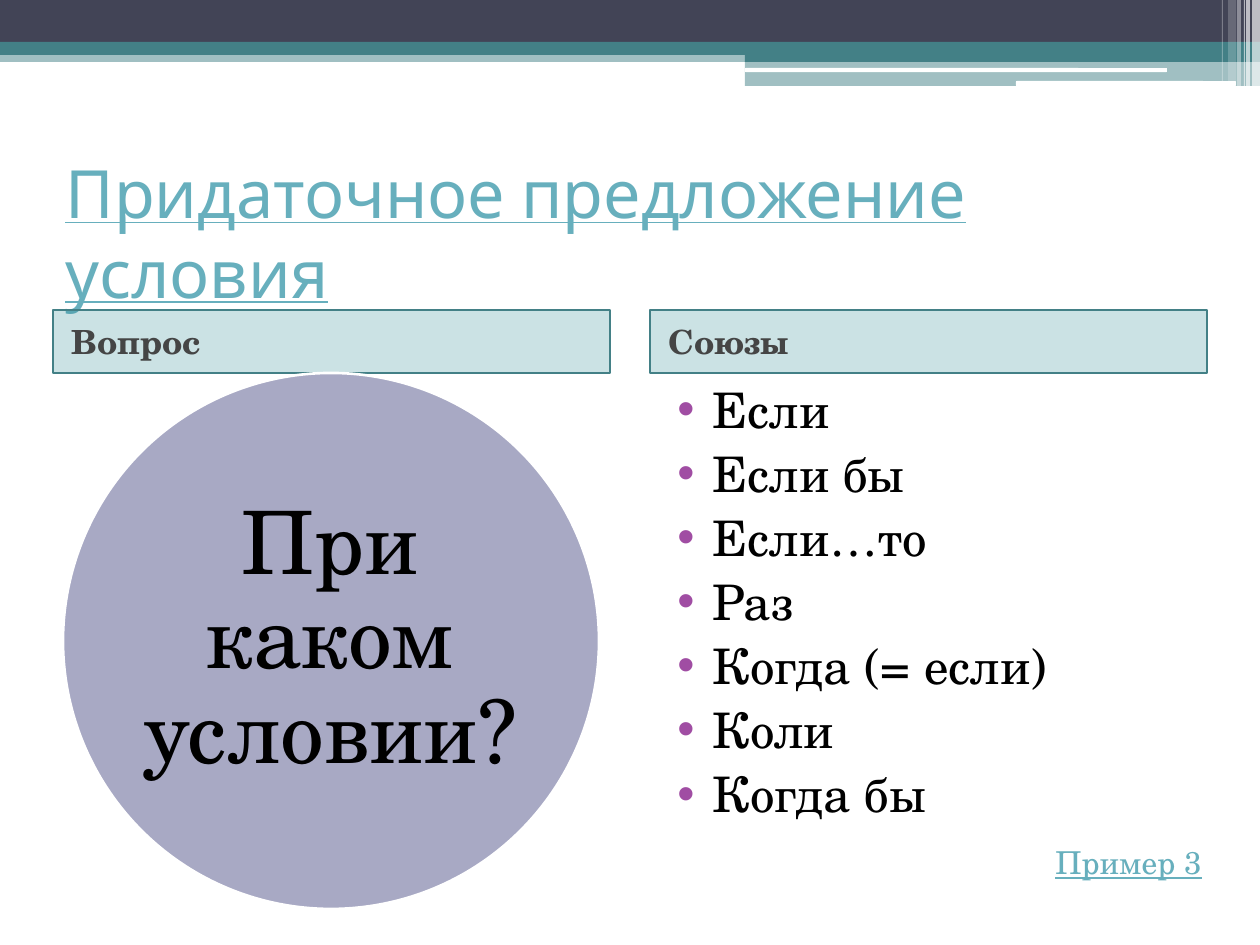
from lxml.etree import SubElement
from pptx import Presentation
from pptx.dml.color import RGBColor
from pptx.enum.shapes import MSO_SHAPE
from pptx.enum.text import MSO_ANCHOR, PP_ALIGN
from pptx.oxml.ns import qn
from pptx.util import Emu, Pt

PX = 914400 / 126
SERIF, SANS = "TeX Gyre Schola", "Karla"
COLORS = {
    "navy": "424456", "teal": "438086", "header": "328E97", "white": "FFFFFF",
    "circle": "53548A", "link": "67AFBD", "gray": "454545", "black": "000000",
    "bullet": "A04DA3",
}
CONJUNCTIONS = ["Если", "Если бы", "Если…то", "Раз", "Когда (= если)", "Коли", "Когда бы"]


def px(length):
    return Emu(round(length * PX))


def color(name):
    return RGBColor.from_string(COLORS[name])


def add_panel(page, bounds, fill, opacity=100, kind=MSO_SHAPE.RECTANGLE, line=None, width=1):
    panel = page.shapes.add_shape(kind, *map(px, bounds))
    panel.shadow.inherit = False
    panel.fill.solid()
    panel.fill.fore_color.rgb = color(fill)
    if opacity < 100:
        tint = panel.fill._xPr.find(qn("a:solidFill"))[0]
        SubElement(tint, qn("a:alpha")).set("val", str(opacity * 1000))
    if line:
        panel.line.color.rgb = color(line)
        panel.line.width = Pt(width)
    else:
        panel.line.fill.background()
    return panel


def write(shape, lines, size, ink, font=SERIF, anchor=MSO_ANCHOR.TOP, align=PP_ALIGN.LEFT,
          before=0, underline=False, bold=False):
    frame = shape.text_frame
    frame.word_wrap = True
    frame.vertical_anchor = anchor
    frame.text = "\n".join(lines)
    for paragraph in frame.paragraphs:
        paragraph.alignment = align
        paragraph.space_before = Pt(before)
        paragraph.font.name = font
        paragraph.font.size = Pt(size)
        paragraph.font.color.rgb = color(ink)
        paragraph.font.underline = underline
        paragraph.font.bold = bold
    return frame


def add_text(page, bounds, lines, size, ink, **style):
    box = page.shapes.add_textbox(*map(px, bounds))
    return write(box, lines, size, ink, **style)


def indent(paragraph, left, first=0):
    properties = paragraph._p.get_or_add_pPr()
    properties.set("marL", str(px(left)))
    properties.set("indent", str(px(first)))
    return properties


def add_bullet(paragraph):
    properties = indent(paragraph, 50, -35)
    tint = SubElement(properties, qn("a:buClr"))
    SubElement(tint, qn("a:srgbClr")).set("val", COLORS["bullet"])
    SubElement(properties, qn("a:buFont")).set("typeface", "Arial")
    SubElement(properties, qn("a:buChar")).set("char", "•")
    # The schema wants default run properties after the bullet
    defaults = properties.find(qn("a:defRPr"))
    if defaults is not None:
        properties.append(defaults)


def add_banner(page):
    # Horizontal bands
    add_panel(page, (0, 50, 1260, 12), "teal", 50)
    add_panel(page, (0, 0, 1260, 43), "navy")
    add_panel(page, (0, 42, 1260, 13), "teal")
    add_panel(page, (745, 49, 515, 13), "teal")
    add_panel(page, (745, 61, 515, 25), "teal", 50)
    for bounds in ((745, 68, 422, 4), (1016, 81, 220, 5)):
        add_panel(page, bounds, "white", kind=MSO_SHAPE.ROUNDED_RECTANGLE)
    # Vertical stripes at the right edge
    stripes = [(1252, 8, 86, 65), (1246, 4, 86, 65), (1244, 1, 86, 60),
               (1237, 4, 86, 40), (1228, 8, 81, 20), (1222, 1, 81, 30)]
    for left, width, height, opacity in stripes:
        add_panel(page, (left, 0, width, height), "white", opacity)


def add_header(page, left, label):
    header = add_panel(page, (left, 310, 557, 63), "header", 25, line="teal")
    frame = write(header, [label], 19, "gray", anchor=MSO_ANCHOR.MIDDLE, before=3, bold=True)
    indent(frame.paragraphs[0], 6)


def add_question(page):
    add_panel(page, (63, 373, 536, 536), "circle", 50, MSO_SHAPE.OVAL, "white", 1.5)
    frame = add_text(page, (141, 451, 379, 379), ["При каком условии?"], 50, "black",
                     anchor=MSO_ANCHOR.MIDDLE, align=PP_ALIGN.CENTER)
    frame.margin_left = frame.margin_right = frame.margin_top = frame.margin_bottom = 0
    frame.paragraphs[0].line_spacing = 0.9


def main():
    deck = Presentation()
    deck.slide_width, deck.slide_height = px(1260), px(945)
    page = deck.slides.add_slide(deck.slide_layouts[6])

    add_banner(page)
    add_text(page, (53, 158, 1155, 147), ["Придаточное предложение условия"], 38, "link",
             font=SANS, anchor=MSO_ANCHOR.MIDDLE, underline=True)

    # Two columns: question and conjunctions
    add_header(page, 53, "Вопрос")
    add_header(page, 650, "Союзы")
    add_question(page)
    frame = add_text(page, (650, 373, 442, 464), CONJUNCTIONS, 28, "black", before=3)
    for paragraph in frame.paragraphs:
        add_bullet(paragraph)

    add_text(page, (1043, 837, 178, 50), ["Пример 3"], 18, "link", underline=True)
    deck.save("out.pptx")


if __name__ == "__main__":
    main()
